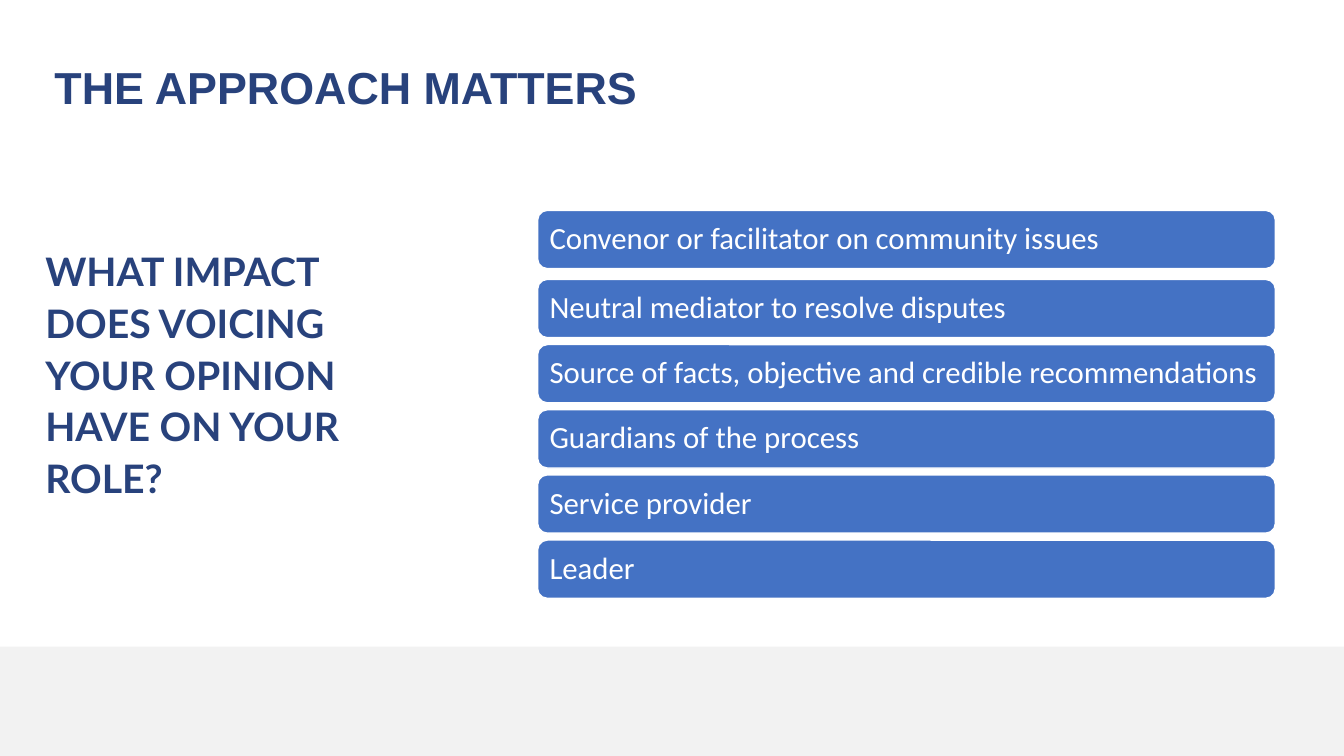
from dataclasses import dataclass

from lxml import etree
from pptx import Presentation
from pptx.dml.color import RGBColor
from pptx.enum.shapes import MSO_SHAPE as Shape
from pptx.enum.text import MSO_ANCHOR as Anchor, PP_ALIGN as Align
from pptx.oxml.ns import qn
from pptx.util import Pt


@dataclass(frozen=True)
class Theme:
    navy: RGBColor = RGBColor(0x28, 0x42, 0x7C)
    blue: RGBColor = RGBColor(0x44, 0x72, 0xC4)
    white: RGBColor = RGBColor(0xFF, 0xFF, 0xFF)
    grey: RGBColor = RGBColor(0x76, 0x76, 0x79)
    title_size: int = 32
    question_size: int = 28
    role_size: int = 22


theme = Theme()


def place(shape, left, top, width, height):
    shape.left, shape.top = Pt(left), Pt(top)
    shape.width, shape.height = Pt(width), Pt(height)


def write(shape, text, font_name, size, color, bold, spacing, inset, anchor):
    """Fill the shape with one left-aligned paragraph; inset is in points."""
    frame = shape.text_frame
    frame.word_wrap = True
    frame.vertical_anchor = anchor
    frame.margin_left = frame.margin_right = Pt(inset)
    frame.margin_top = frame.margin_bottom = Pt(0)
    paragraph = frame.paragraphs[0]
    paragraph.alignment = Align.LEFT
    paragraph.line_spacing = spacing
    paragraph.space_before = Pt(0)
    run = paragraph.add_run()
    run.text = text
    run.font.name = font_name
    run.font.size = Pt(size)
    run.font.bold = bold
    run.font.color.rgb = color
    return paragraph


presentation = Presentation()
presentation.slide_width, presentation.slide_height = Pt(960), Pt(540)
slide = presentation.slides.add_slide(presentation.slide_layouts[1])

# Title and question
title = slide.shapes.title
place(title, 38.9, 38.9, 551.5, 95)
write(title, "THE APPROACH MATTERS", "Arial", theme.title_size, theme.navy,
      True, 1.1, 0, Anchor.TOP)

question = slide.placeholders[1]
place(question, 32.4, 173.3, 252.7, 209)
paragraph = write(question, "WHAT IMPACT DOES VOICING YOUR OPINION HAVE ON YOUR ROLE?",
                  "Lato", theme.question_size, theme.navy, True, 1.1, 0, Anchor.TOP)
properties = paragraph._p.get_or_add_pPr()
properties.set("marL", "0")
properties.set("indent", "0")
etree.SubElement(properties, qn("a:buNone"))

# Footer band
band = slide.shapes.add_shape(Shape.RECTANGLE, Pt(0), Pt(462), Pt(960), Pt(78))
band.shadow.inherit = False
band.fill.solid()
band.fill.fore_color.rgb = theme.grey
band.line.fill.background()
band_color = band.fill._xPr.find(qn("a:solidFill"))[0]
etree.SubElement(band_color, qn("a:alpha")).set("val", "9000")

# Role bars: the first stands slightly apart, the others are evenly spaced
roles = [
    "Convenor or facilitator on community issues",
    "Neutral mediator to resolve disputes",
    "Source of facts, objective and credible recommendations",
    "Guardians of the process",
    "Service provider",
    "Leader",
]
first_top, second_top, pitch = 150.3, 199.6, 46.55
for index, role in enumerate(roles):
    top = second_top + (index - 1) * pitch if index else first_top
    bar = slide.shapes.add_shape(Shape.ROUNDED_RECTANGLE, Pt(384), Pt(top), Pt(527), Pt(41.6))
    bar.shadow.inherit = False
    bar.fill.solid()
    bar.fill.fore_color.rgb = theme.blue
    bar.line.color.rgb = theme.white
    bar.line.width = Pt(1)
    write(bar, role, "Calibri", theme.role_size, theme.white, False, 0.9, 6.5, Anchor.MIDDLE)

presentation.save("out.pptx")
